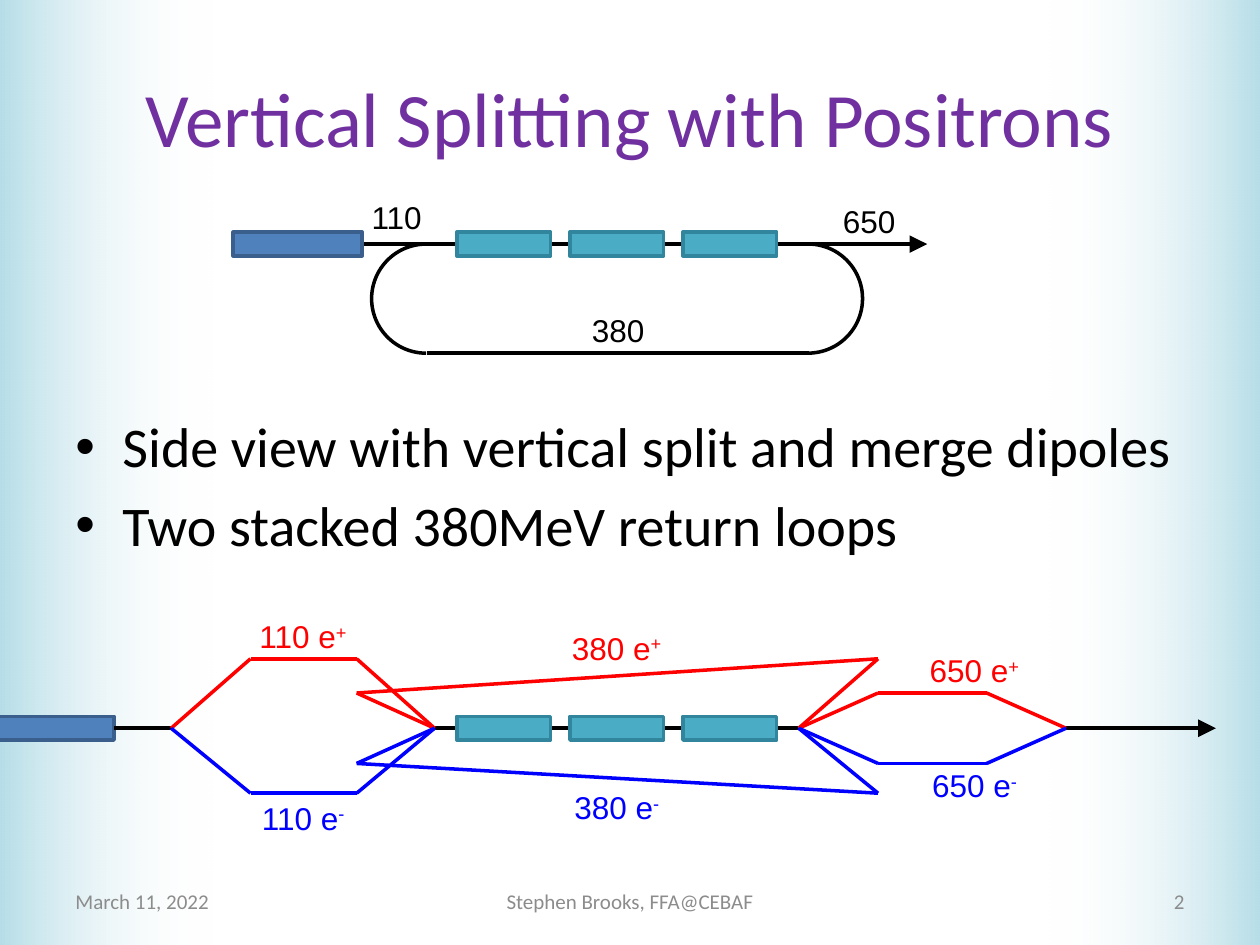
from lxml import etree
from pptx import Presentation
from pptx.dml.color import RGBColor
from pptx.enum.shapes import MSO_CONNECTOR, MSO_SHAPE
from pptx.enum.text import MSO_ANCHOR, PP_ALIGN
from pptx.oxml.ns import qn
from pptx.util import Cm, Pt

RECT, ARC = MSO_SHAPE.RECTANGLE, MSO_SHAPE.ARC
STRAIGHT = MSO_CONNECTOR.STRAIGHT
LEFT, CENTER, RIGHT = PP_ALIGN.LEFT, PP_ALIGN.CENTER, PP_ALIGN.RIGHT
TOP, MIDDLE = MSO_ANCHOR.TOP, MSO_ANCHOR.MIDDLE

COLORS = {
    "edge": "B7DEE8", "white": "FFFFFF", "black": "000000",
    "title": "7030A0", "footer": "8C8C8C",
    "injector": "4F81BD", "injector_line": "3A5F8C",
    "cavity": "4BACC6", "cavity_line": "31859C",
    "positron": "FF0000", "electron": "0000FF",
}
LOOP_Y, LOOP_SIZE = 4.92, 2.2
SPLIT_Y = 14.68


def rgb(name):
    return RGBColor.from_string(COLORS[name])


def add_run(p, text, size, font, color, baseline=None):
    r = p.add_run()
    r.text = text
    r.font.size = Pt(size)
    r.font.name = font
    r.font.color.rgb = rgb(color)
    if baseline:
        r._r.get_or_add_rPr().set("baseline", str(baseline))


def add_text(s, box, text, size=18, font="Arial", color="black", align=LEFT,
             anchor=TOP, wrap=True, bullet=False, sup=None):
    sp = s.shapes.add_textbox(*map(Cm, box))
    tf = sp.text_frame
    tf.word_wrap = wrap
    tf.vertical_anchor = anchor
    for i, line in enumerate(text.split("\n")):
        p = tf.add_paragraph() if i else tf.paragraphs[0]
        p.alignment = align
        add_run(p, line, size, font, color)
        if sup:
            add_run(p, sup, size, font, color, 30000)
        if bullet:
            p.space_before = Pt(size * 0.2)
            pPr = p._p.get_or_add_pPr()
            pPr.set("marL", str(Cm(0.95)))
            pPr.set("indent", str(-Cm(0.95)))
            etree.SubElement(pPr, qn("a:buFont"), typeface="Arial")
            etree.SubElement(pPr, qn("a:buChar"), char="•")


def add_line(s, start, end, color="black", arrow=False):
    c = s.shapes.add_connector(STRAIGHT, *map(Cm, (*start, *end)))
    c.line.color.rgb = rgb(color)
    c.line.width = Pt(2)
    if arrow:
        etree.SubElement(c.line._get_or_add_ln(), qn("a:tailEnd"),
                         type="triangle", w="lg", len="lg")
    etree.SubElement(c._element.spPr, qn("a:effectLst"))


def add_path(s, points, color):
    for start, end in zip(points, points[1:]):
        add_line(s, start, end, color)


def add_block(s, left, axis, width, kind):
    sp = s.shapes.add_shape(RECT, Cm(left), Cm(axis - 0.24), Cm(width), Cm(0.48))
    sp.shadow.inherit = False
    sp.fill.solid()
    sp.fill.fore_color.rgb = rgb(kind)
    sp.line.color.rgb = rgb(kind + "_line")
    sp.line.width = Pt(2)


def add_cavities(s, axis):
    for i in range(3):
        add_block(s, 9.21 + 2.28 * i, axis, 1.89, "cavity")


def add_arc(s, left, rotation):
    sp = s.shapes.add_shape(ARC, Cm(left), Cm(LOOP_Y), Cm(LOOP_SIZE), Cm(LOOP_SIZE))
    sp.shadow.inherit = False
    sp.adjustments[0] = 162
    sp.adjustments[1] = 55.62
    sp.rotation = rotation
    sp.fill.background()
    sp.line.color.rgb = rgb("black")
    sp.line.width = Pt(2)


def add_edge(s, left, rotation):
    sp = s.shapes.add_shape(RECT, Cm(left), 0, Cm(4.29), Cm(19.05))
    sp.shadow.inherit = False
    sp.rotation = rotation
    sp.line.fill.background()
    sp.fill.gradient()
    sp.fill.gradient_angle = 0
    for stop, name in zip(sp.fill.gradient_stops, ("edge", "white")):
        stop.color.rgb = rgb(name)
    clear = sp._element.spPr.findall(".//" + qn("a:srgbClr"))[-1]
    etree.SubElement(clear, qn("a:alpha"), val="0")


def add_loop(s):
    add_line(s, (7.29, LOOP_Y), (18.69, LOOP_Y), arrow=True)
    add_block(s, 4.7, LOOP_Y, 2.6, "injector")
    add_cavities(s, LOOP_Y)
    add_line(s, (8.61, LOOP_Y + LOOP_SIZE), (16.31, LOOP_Y + LOOP_SIZE))
    add_arc(s, 15.19, 0)
    add_arc(s, 7.49, 180)
    for text, left, top in (("110", 7.24, 3.86), ("650", 16.74, 3.94),
                            ("380", 11.68, 6.15)):
        add_text(s, (left, top, 1.57, 1.02), text, wrap=False)


def add_beam(s, color, inner, outer, sign, labels):
    add_path(s, [(3.45, SPLIT_Y), (5.05, outer), (7.19, outer), (8.76, SPLIT_Y),
                 (7.19, inner), (17.7, outer), (16.1, SPLIT_Y), (17.7, inner),
                 (19.89, inner), (21.49, SPLIT_Y)], color)
    for energy, left, top in labels:
        add_text(s, (left, top, 2.5, 1.02), energy + " e", color=color, sup=sign)


def add_split(s):
    add_line(s, (21.49, SPLIT_Y), (24.51, SPLIT_Y), arrow=True)
    add_block(s, -0.3, SPLIT_Y, 2.6, "injector")
    add_line(s, (2.3, SPLIT_Y), (3.45, SPLIT_Y))
    add_line(s, (8.76, SPLIT_Y), (16.1, SPLIT_Y))
    add_cavities(s, SPLIT_Y)
    add_beam(s, "positron", 13.97, 13.28, "+",
             (("110", 4.98, 12.32), ("380", 11.28, 12.55), ("650", 18.49, 13.0)))
    add_beam(s, "electron", 15.39, 15.99, "-",
             (("110", 5.03, 15.98), ("380", 11.33, 15.77), ("650", 18.54, 15.32)))


def main():
    prs = Presentation()
    prs.slide_width, prs.slide_height = Cm(25.4), Cm(19.05)
    s = prs.slides.add_slide(prs.slide_layouts[6])
    add_edge(s, 21.11, 180)
    add_edge(s, 0, 0)
    add_text(s, (1.27, 0.76, 22.86, 3.18), "Vertical Splitting with Positrons",
             size=44, font="Calibri", color="title", align=CENTER, anchor=MIDDLE)
    add_loop(s)
    add_text(s, (1.27, 8.18, 22.86, 3.94),
             "Side view with vertical split and merge dipoles\n"
             "Two stacked 380MeV return loops",
             size=32, font="Calibri", bullet=True)
    add_split(s)
    for text, left, width, align in (
            ("March 11, 2022", 1.27, 5.93, LEFT),
            ("Stephen Brooks, FFA@CEBAF", 8.68, 8.04, CENTER),
            ("2", 18.2, 5.93, RIGHT)):
        add_text(s, (left, 17.66, width, 1.01), text, size=12, font="Calibri",
                 color="footer", align=align, anchor=MIDDLE)
    prs.save("out.pptx")


if __name__ == "__main__":
    main()
